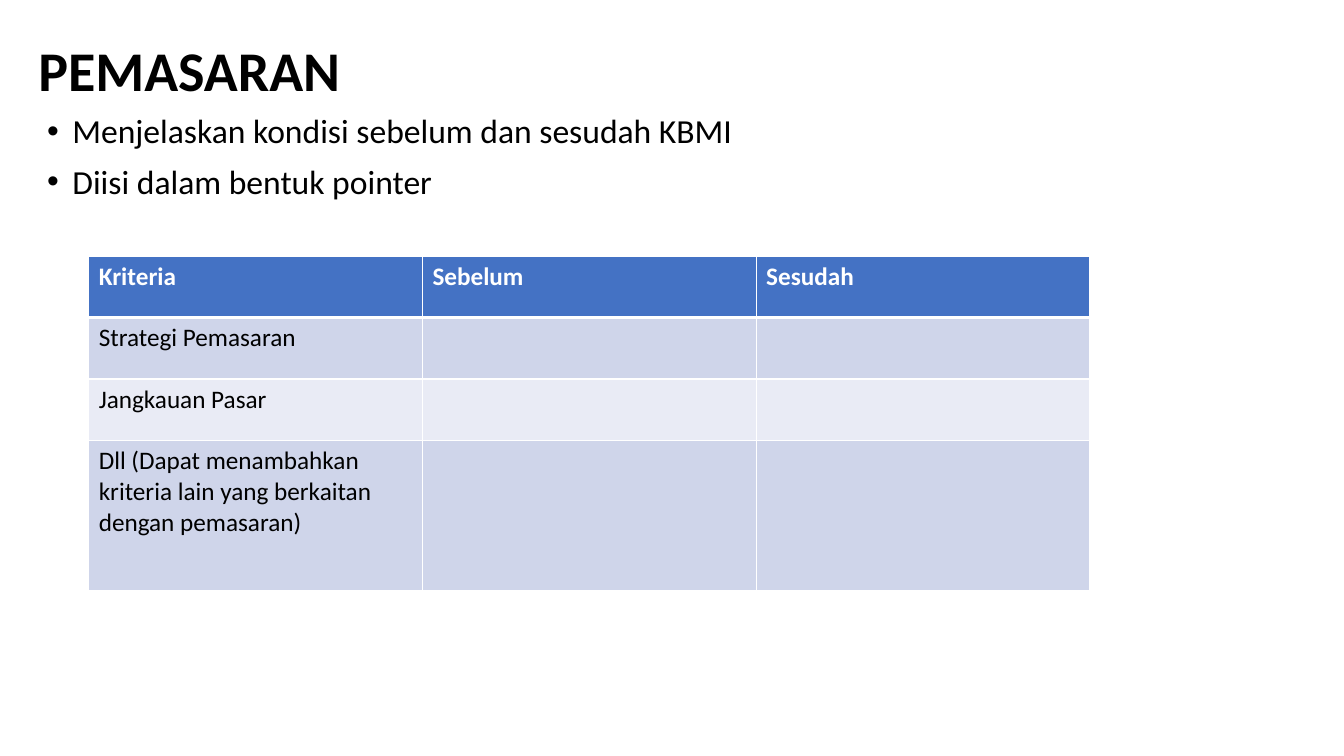
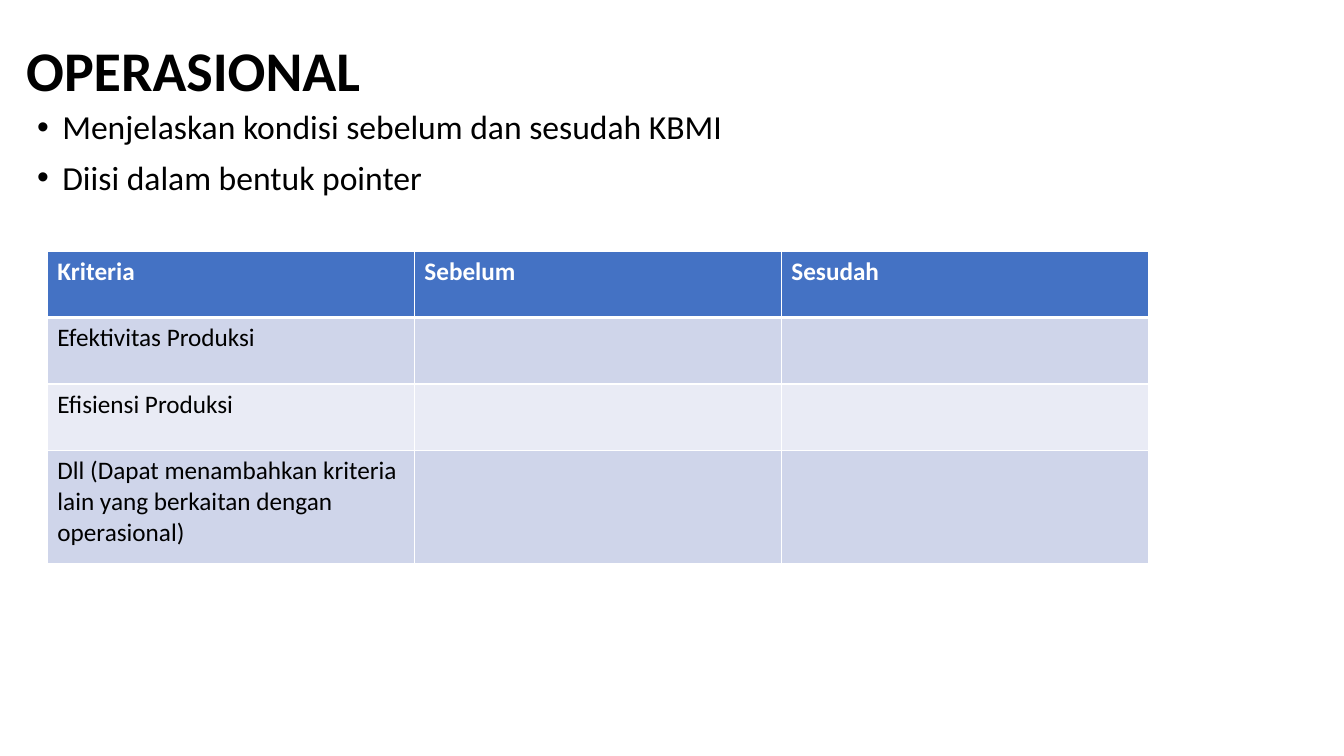
from dataclasses import dataclass
from typing import NamedTuple

import lxml.etree
import pptx
import pptx.dml.color
import pptx.enum.text
import pptx.oxml
import pptx.oxml.ns
import pptx.util

EMU_PER_PX = 9144  # 100 px to the inch


class Box(NamedTuple):
    left: int
    top: int
    width: int
    height: int


@dataclass(frozen=True)
class Theme:
    font: str = "Calibri"
    ink: str = "000000"
    white: str = "FFFFFF"
    header_fill: str = "4472C4"
    bands: tuple[str, str] = ("CFD5EA", "E9EBF5")
    title_size: int = 40
    body_size: int = 24
    table_size: int = 18
    rule: int = 1
    header_rule: int = 3
    line_spacing: float = 0.9
    space_before: int = 10
    bullet_indent: int = 25


@dataclass(frozen=True)
class Comparison:
    title: str
    criteria: tuple[str, ...]
    title_box: Box
    points_box: Box
    table_left: int
    table_top: int
    column_width: int
    row_heights: tuple[int, ...]


THEME = Theme()
POINTS = ("Menjelaskan kondisi sebelum dan sesudah KBMI", "Diisi dalam bentuk pointer")
HEADINGS = ("Kriteria", "Sebelum", "Sesudah")
COMPARISONS = (
    Comparison(
        "PEMASARAN",
        ("Strategi Pemasaran", "Jangkauan Pasar",
         "Dll (Dapat menambahkan kriteria lain yang berkaitan dengan pemasaran)"),
        Box(28, 0, 1150, 145), Box(37, 109, 1150, 476),
        88, 254, 331, (61, 61, 61, 149),
    ),
    Comparison(
        "OPERASIONAL",
        ("Efektivitas Produksi", "Efisiensi Produksi",
         "Dll (Dapat menambahkan kriteria lain yang berkaitan dengan operasional)"),
        Box(16, 0, 1150, 145), Box(27, 105, 1150, 476),
        47, 249, 364, (66, 66, 66, 112),
    ),
)


def px(length: int) -> pptx.util.Emu:
    return pptx.util.Emu(length * EMU_PER_PX)


def rgb(color: str) -> pptx.dml.color.RGBColor:
    return pptx.dml.color.RGBColor.from_string(color)


def add_bullet(paragraph) -> None:
    properties = paragraph._p.get_or_add_pPr()
    indent = px(THEME.bullet_indent)
    properties.set("marL", str(indent))
    properties.set("indent", str(-indent))
    for tag, attribute, value in (("a:buFont", "typeface", "Arial"), ("a:buChar", "char", "•")):
        element = lxml.etree.SubElement(properties, pptx.oxml.ns.qn(tag))
        element.set(attribute, value)


def write_text(frame, *lines: str, size: int, color: str = THEME.ink, bold: bool = False,
               line_spacing: float = 1.0, space_before: int = 0, bullets: bool = False) -> None:
    """Fill the frame with one paragraph for each line."""
    for index, line in enumerate(lines):
        paragraph = frame.add_paragraph() if index else frame.paragraphs[0]
        paragraph.alignment = pptx.enum.text.PP_ALIGN.LEFT
        paragraph.line_spacing = line_spacing
        paragraph.space_before = pptx.util.Pt(space_before)
        if bullets:
            add_bullet(paragraph)
        run = paragraph.add_run()
        run.text = line
        run.font.name = THEME.font
        run.font.size = pptx.util.Pt(size)
        run.font.bold = bold
        run.font.color.rgb = rgb(color)


def add_title(slide, text: str, box: Box) -> None:
    title = slide.shapes.title
    title.left, title.top, title.width, title.height = map(px, box)
    frame = title.text_frame
    frame.auto_size = pptx.enum.text.MSO_AUTO_SIZE.NONE
    frame.vertical_anchor = pptx.enum.text.MSO_ANCHOR.MIDDLE
    write_text(frame, text, size=THEME.title_size, bold=True, line_spacing=THEME.line_spacing)


def add_points(slide, box: Box) -> None:
    frame = slide.shapes.add_textbox(*map(px, box)).text_frame
    frame.word_wrap = True
    write_text(frame, *POINTS, size=THEME.body_size, line_spacing=THEME.line_spacing,
               space_before=THEME.space_before, bullets=True)


def set_borders(cell, top: int, bottom: int) -> None:
    """Draw white borders; widths are in points."""
    properties = cell._tc.get_or_add_tcPr()
    sides = (("L", THEME.rule), ("R", THEME.rule), ("T", top), ("B", bottom))
    for index, (side, width) in enumerate(sides):
        border = pptx.oxml.parse_xml(
            f'<a:ln{side} {pptx.oxml.ns.nsdecls("a")} w="{pptx.util.Pt(width)}">'
            f'<a:solidFill><a:srgbClr val="{THEME.white}"/></a:solidFill></a:ln{side}>'
        )
        properties.insert(index, border)


def add_criteria_table(slide, comparison: Comparison) -> None:
    rows = (HEADINGS, *((criterion, "", "") for criterion in comparison.criteria))
    box = Box(comparison.table_left, comparison.table_top,
              comparison.column_width * len(HEADINGS), sum(comparison.row_heights))
    table = slide.shapes.add_table(len(rows), len(HEADINGS), *map(px, box)).table
    for column in table.columns:
        column.width = px(comparison.column_width)
    for row_index, (texts, height) in enumerate(zip(rows, comparison.row_heights)):
        table.rows[row_index].height = px(height)
        is_header = row_index == 0
        fill = THEME.header_fill if is_header else THEME.bands[(row_index - 1) % 2]
        for column_index, text in enumerate(texts):
            cell = table.cell(row_index, column_index)
            cell.fill.solid()
            cell.fill.fore_color.rgb = rgb(fill)
            set_borders(cell, top=THEME.header_rule if row_index == 1 else THEME.rule,
                        bottom=THEME.header_rule if is_header else THEME.rule)
            if text:
                write_text(cell.text_frame, text, size=THEME.table_size, bold=is_header,
                           color=THEME.white if is_header else THEME.ink)


def main() -> None:
    deck = pptx.Presentation()
    deck.slide_width, deck.slide_height = px(1333), px(750)
    title_only = deck.slide_layouts.get_by_name("Title Only")
    for comparison in COMPARISONS:
        slide = deck.slides.add_slide(title_only)
        add_title(slide, comparison.title, comparison.title_box)
        add_points(slide, comparison.points_box)
        add_criteria_table(slide, comparison)
    deck.save("out.pptx")


if __name__ == "__main__":
    main()
